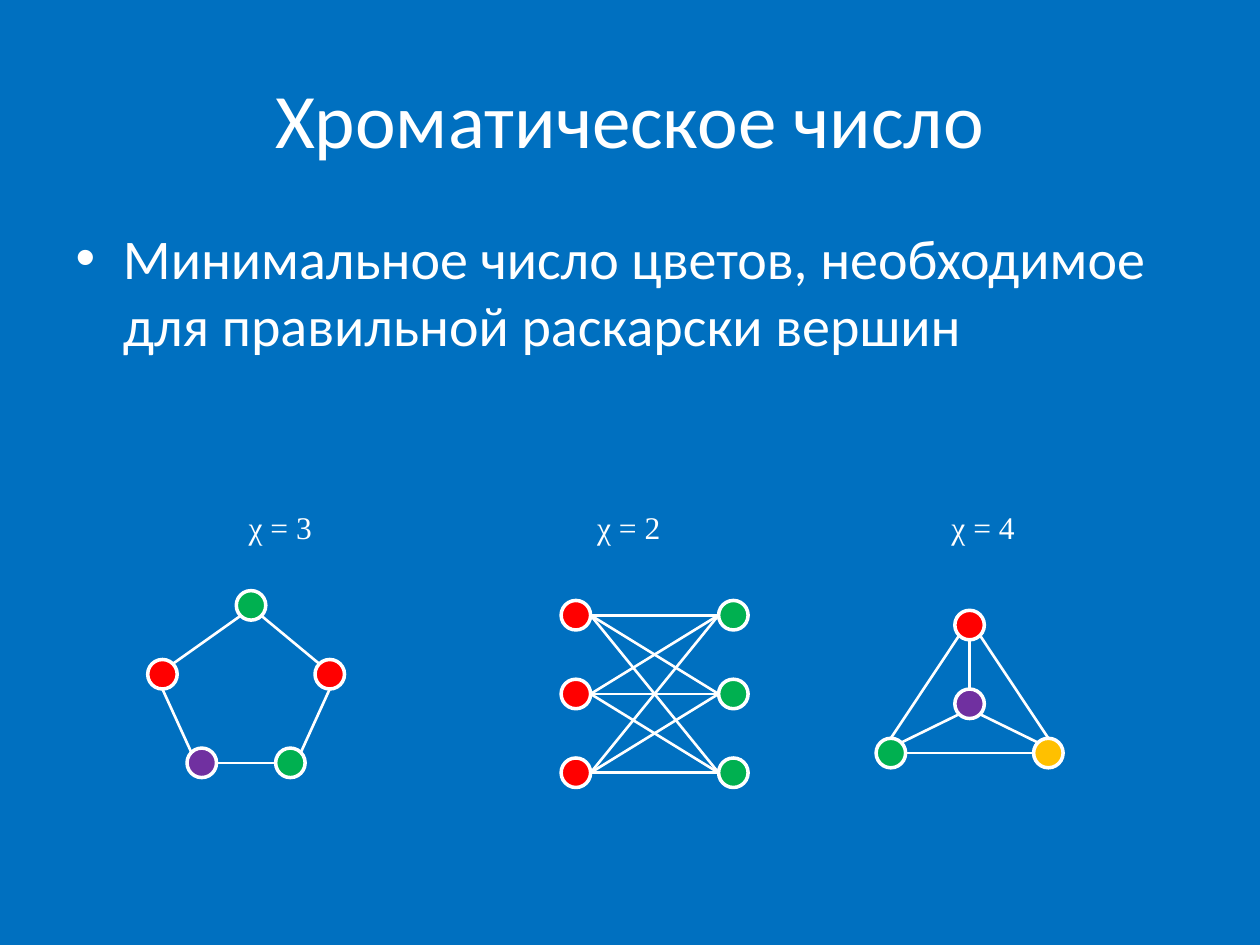
from dataclasses import dataclass
from itertools import product
from math import cos, radians, sin

from lxml.etree import SubElement
from pptx import Presentation
from pptx.dml.color import RGBColor as Rgb
from pptx.enum.shapes import MSO_CONNECTOR as Link, MSO_SHAPE as Form
from pptx.enum.text import MSO_ANCHOR as Anchor, MSO_AUTO_SIZE as Fit, PP_ALIGN as Align
from pptx.oxml.ns import qn
from pptx.util import Inches, Pt


@dataclass(frozen=True)
class Theme:
    back: str = "0070C0"
    ink: str = "FFFFFF"
    red: str = "FF0000"
    green: str = "00B050"
    violet: str = "7030A0"
    gold: str = "FFC000"
    sans: str = "Calibri"
    serif: str = "Times New Roman"
    title: int = 44
    body: int = 32
    label: int = 18
    ring: float = 2
    edge: float = 1.5


THEME = Theme()
WIDE, HIGH = Inches(10), Inches(7.5)
COLS = 128
UNIT = WIDE / COLS
NODE = 3
ANGLES = {"E": 0, "SE": 45, "S": 90, "SW": 135, "W": 180, "NW": 225, "N": 270, "NE": 315}


def grid(n):
    return round(n * UNIT)


def add_run(para, text, size, font):
    run = para.add_run()
    run.text = text
    run.font.size = Pt(size)
    run.font.name = font
    run.font.color.rgb = Rgb.from_string(THEME.ink)


def fill_holder(holder, top, height, text, size):
    holder.left, holder.width = round(WIDE * 0.05), round(WIDE * 0.9)
    holder.top, holder.height = round(HIGH * top), round(HIGH * height)
    para = holder.text_frame.paragraphs[0]
    add_run(para, text, size, THEME.sans)
    return para


def add_label(slide, col, row, text):
    box = slide.shapes.add_textbox(grid(col), grid(row), Inches(0.73), Inches(0.4))
    frame = box.text_frame
    frame.word_wrap = False
    frame.auto_size = Fit.SHAPE_TO_FIT_TEXT
    add_run(frame.paragraphs[0], text, THEME.label, THEME.serif)


def add_node(slide, col, row, color):
    dot = slide.shapes.add_shape(Form.OVAL, grid(col), grid(row), grid(NODE), grid(NODE))
    dot.shadow.inherit = False
    dot.fill.solid()
    dot.fill.fore_color.rgb = Rgb.from_string(color)
    dot.line.color.rgb = Rgb.from_string(THEME.ink)
    dot.line.width = Pt(THEME.ring)


def rim(node, side):
    col, row, _ = node
    turn, half = radians(ANGLES[side]), NODE / 2
    return grid(col + half + half * cos(turn)), grid(row + half + half * sin(turn))


def add_edge(slide, start, end):
    line = slide.shapes.add_connector(Link.STRAIGHT, *start, *end)
    line.line.color.rgb = Rgb.from_string(THEME.ink)
    line.line.width = Pt(THEME.edge)
    SubElement(line._element.spPr, qn("a:effectLst"))


def add_graph(slide, nodes, edges):
    for node in nodes.values():
        add_node(slide, *node)
    for start, out, end, into in edges:
        add_edge(slide, rim(nodes[start], out), rim(nodes[end], into))


def add_cycle(slide):
    nodes = {
        "top": (24, 60, THEME.green),
        "left": (15, 67, THEME.red),
        "right": (32, 67, THEME.red),
        "low left": (19, 76, THEME.violet),
        "low right": (28, 76, THEME.green),
    }
    edges = [
        ("right", "NW", "top", "SE"),
        ("left", "NE", "top", "SW"),
        ("left", "S", "low left", "NW"),
        ("low left", "E", "low right", "W"),
        ("low right", "NE", "right", "S"),
    ]
    add_graph(slide, nodes, edges)


def add_pairs(slide):
    rows = range(61, 78, 8)
    sides = {57: THEME.red, 73: THEME.green}
    nodes = {(col, row): (col, row, color) for col, color in sides.items() for row in rows}
    edges = [((57, a), "E", (73, b), "W") for a, b in product(rows, rows)]
    add_graph(slide, nodes, edges)


def add_full(slide):
    nodes = {
        "left": (89, 75, THEME.green),
        "top": (97, 62, THEME.red),
        "right": (105, 75, THEME.gold),
        "core": (97, 70, THEME.violet),
    }
    edges = [
        ("left", "N", "top", "SW"),
        ("left", "NE", "core", "SW"),
        ("core", "N", "top", "S"),
        ("right", "N", "top", "SE"),
        ("right", "W", "left", "E"),
        ("right", "NW", "core", "SE"),
    ]
    add_graph(slide, nodes, edges)


def main():
    deck = Presentation()
    deck.slide_width, deck.slide_height = WIDE, HIGH
    slide = deck.slides.add_slide(deck.slide_layouts[1])
    slide.background.fill.solid()
    slide.background.fill.fore_color.rgb = Rgb.from_string(THEME.back)

    title, body = slide.placeholders
    head = fill_holder(title, 0.04, 0.17, "Хроматическое число", THEME.title)
    head.alignment = Align.CENTER
    title.text_frame.vertical_anchor = Anchor.MIDDLE
    fill_holder(
        body, 0.23, 0.66,
        "Минимальное число цветов, необходимое для правильной раскарски вершин",
        THEME.body,
    )

    add_cycle(slide)
    add_pairs(slide)
    add_full(slide)
    for col, count in ((24, 3), (59.4, 2), (95.4, 4)):
        add_label(slide, col, 51, f"χ = {count}")
    deck.save("out.pptx")


if __name__ == "__main__":
    main()
